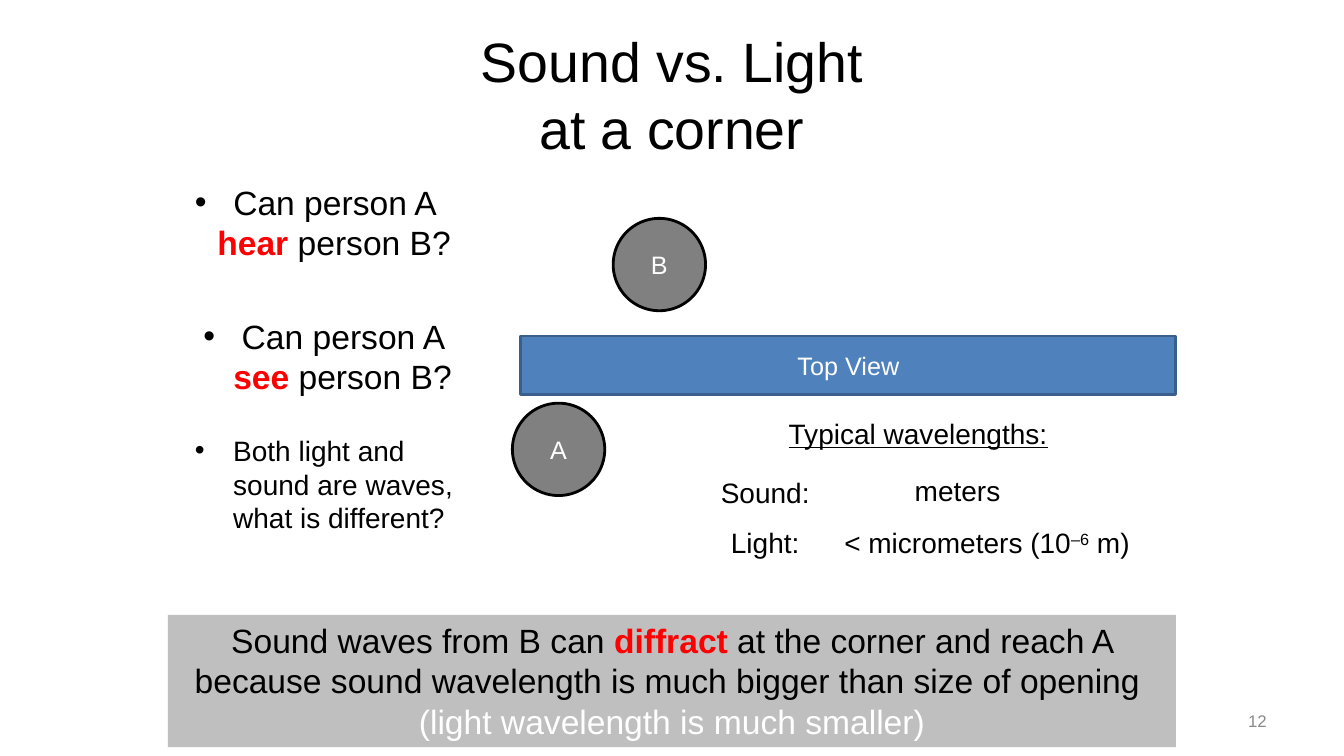
from dataclasses import dataclass, field
from typing import Any

from lxml import etree
from pptx import Presentation
from pptx.dml.color import RGBColor
from pptx.enum.shapes import MSO_SHAPE
from pptx.enum.text import MSO_ANCHOR, MSO_AUTO_SIZE, PP_ALIGN
from pptx.oxml.ns import qn
from pptx.util import Emu, Inches, Pt

RECTANGLE, OVAL = MSO_SHAPE.RECTANGLE, MSO_SHAPE.OVAL
TOP, MIDDLE = MSO_ANCHOR.TOP, MSO_ANCHOR.MIDDLE
LEFT, CENTER, RIGHT = PP_ALIGN.LEFT, PP_ALIGN.CENTER, PP_ALIGN.RIGHT
NO_FIT = MSO_AUTO_SIZE.NONE

COLUMNS, ROWS = 160, 90
COMPARISON_LAYOUT = 4
SUPERSCRIPT = 30000


@dataclass(frozen=True)
class Theme:
    font: str = "Arial"
    ink: str = "000000"
    paper: str = "FFFFFF"
    accent: str = "FF0000"
    wall: str = "4F81BD"
    wall_edge: str = "3A5F8C"
    person: str = "808080"
    banner: str = "BFBFBF"
    muted: str = "898989"
    title: float = 39.6
    large: float = 24
    medium: float = 20
    label: float = 18
    small: float = 12
    edge: float = 2


THEME = Theme()


@dataclass(frozen=True)
class Cell:
    column: float
    row: float
    columns: float
    rows: float


@dataclass(frozen=True)
class Span:
    text: str
    color: str = THEME.ink
    format: dict[str, Any] = field(default_factory=dict)
    baseline: int = 0


@dataclass(frozen=True)
class Copy:
    cell: Cell
    paragraphs: list[list[Span]]
    size: float = THEME.medium
    align: Any = CENTER
    anchor: Any = TOP
    bullet: bool = False
    spacing: float = 1.0


@dataclass(frozen=True)
class Block:
    copy: Copy
    outline: Any
    fill: str
    edge: str | None = None


def accent(text: str) -> Span:
    return Span(text, THEME.accent, {"bold": True})


def label(text: str) -> list[list[Span]]:
    return [[Span(text, THEME.paper)]]


HEADLINE = Copy(Cell(8, 3.6, 144, 15), [[Span("Sound vs. Light\nat a corner")]],
                THEME.title, anchor=MIDDLE, spacing=1.02)

QUESTIONS = [
    Copy(Cell(20, 21, 35, 10.9),
         [[Span("Can person A "), accent("hear "), Span("person B?")]],
         THEME.large, bullet=True),
    Copy(Cell(22, 37, 33, 10.9),
         [[Span("Can person A "), accent("see"), Span(" person B?")]],
         THEME.large, bullet=True),
    Copy(Cell(22, 51, 35, 13.3),
         [[Span("Both light and sound are waves, what is different?")]],
         align=LEFT, bullet=True),
]

WAVELENGTHS = [
    Copy(Cell(82.8, 49, 53, 5.25),
         [[Span("Typical wavelengths:", format={"underline": True})]]),
    Copy(Cell(78.6, 56, 25, 5.25), [[Span("Sound:")]]),
    Copy(Cell(78.6, 62, 25, 5.25), [[Span("Light:")]]),
    Copy(Cell(98, 55.8, 32, 5.25), [[Span("meters")]]),
    Copy(Cell(98, 62, 39, 5.25),
         [[Span("< micrometers (10"), Span("–6", baseline=SUPERSCRIPT), Span(" m)")]]),
]

PAGE_NUMBER = Copy(Cell(114.7, 83.4, 37.3, 4.8), [[Span("12", THEME.muted)]],
                   THEME.small, RIGHT, MIDDLE)


def person(name: str, column: float, row: float) -> Block:
    return Block(Copy(Cell(column, row, 11, 11), label(name), THEME.label, anchor=MIDDLE),
                 OVAL, THEME.person, THEME.ink)


BLOCKS = [
    Block(Copy(Cell(62, 40, 78, 7), label("Top View"), THEME.label, anchor=MIDDLE),
          RECTANGLE, THEME.wall, THEME.wall_edge),
    person("A", 61, 48),
    person("B", 73, 26),
    Block(Copy(Cell(20, 73.2, 120, 15.75),
               [[Span("Sound waves from B can "), accent("diffract"),
                 Span(" at the corner and reach A because sound wavelength "
                      "is much bigger than size of opening ")],
                [Span("(light wavelength is much smaller)", THEME.paper)]],
               THEME.large),
          RECTANGLE, THEME.banner),
]


def apply(target: Any, values: dict[str, Any]) -> None:
    for name, value in values.items():
        setattr(target, name, value)


def bounds(cell: Cell, deck: Any) -> dict[str, Emu]:
    column, row = deck.slide_width / COLUMNS, deck.slide_height / ROWS
    return {"left": Emu(round(cell.column * column)), "top": Emu(round(cell.row * row)),
            "width": Emu(round(cell.columns * column)), "height": Emu(round(cell.rows * row))}


def add_bullet(paragraph: Any) -> None:
    properties = paragraph._p.get_or_add_pPr()
    indent = Inches(0.38)
    properties.set("marL", str(indent))
    properties.set("indent", str(-indent))
    etree.SubElement(properties, qn("a:buFont")).set("typeface", THEME.font)
    etree.SubElement(properties, qn("a:buChar")).set("char", "•")


def add_span(paragraph: Any, span: Span, size: float) -> None:
    for index, line in enumerate(span.text.split("\n")):
        if index:
            paragraph.add_line_break()
        run = paragraph.add_run()
        run.text = line
        apply(run.font, {"name": THEME.font, "size": Pt(size), "bold": False} | span.format)
        run.font.color.rgb = RGBColor.from_string(span.color)
        if span.baseline:
            run._r.get_or_add_rPr().set("baseline", str(span.baseline))


def write(holder: Any, copy: Copy) -> None:
    frame = holder.text_frame
    apply(frame, {"word_wrap": True, "auto_size": NO_FIT, "vertical_anchor": copy.anchor})
    for index, spans in enumerate(copy.paragraphs):
        paragraph = frame.add_paragraph() if index else frame.paragraphs[0]
        apply(paragraph, {"alignment": copy.align, "line_spacing": copy.spacing,
                          "space_before": Pt(0), "space_after": Pt(0)})
        if copy.bullet:
            add_bullet(paragraph)
        for span in spans:
            add_span(paragraph, span, copy.size)


def draw_block(slide: Any, block: Block, deck: Any) -> None:
    shape = slide.shapes.add_shape(block.outline, **bounds(block.copy.cell, deck))
    shape.shadow.inherit = False
    shape.fill.solid()
    shape.fill.fore_color.rgb = RGBColor.from_string(block.fill)
    if block.edge:
        shape.line.color.rgb = RGBColor.from_string(block.edge)
        shape.line.width = Pt(THEME.edge)
    else:
        shape.line.fill.background()
    write(shape, block.copy)


def main() -> None:
    deck = Presentation()
    apply(deck, {"slide_width": Emu(12192000), "slide_height": Inches(7.5)})
    slide = deck.slides.add_slide(deck.slide_layouts[COMPARISON_LAYOUT])
    headline, *bodies, spare = slide.placeholders
    spare.element.getparent().remove(spare.element)
    for holder, copy in zip([headline, *bodies], [HEADLINE, *QUESTIONS]):
        apply(holder, bounds(copy.cell, deck))
        write(holder, copy)
    for copy in [*WAVELENGTHS, PAGE_NUMBER]:
        write(slide.shapes.add_textbox(**bounds(copy.cell, deck)), copy)
    for block in BLOCKS:
        draw_block(slide, block, deck)
    deck.save("out.pptx")


if __name__ == "__main__":
    main()
